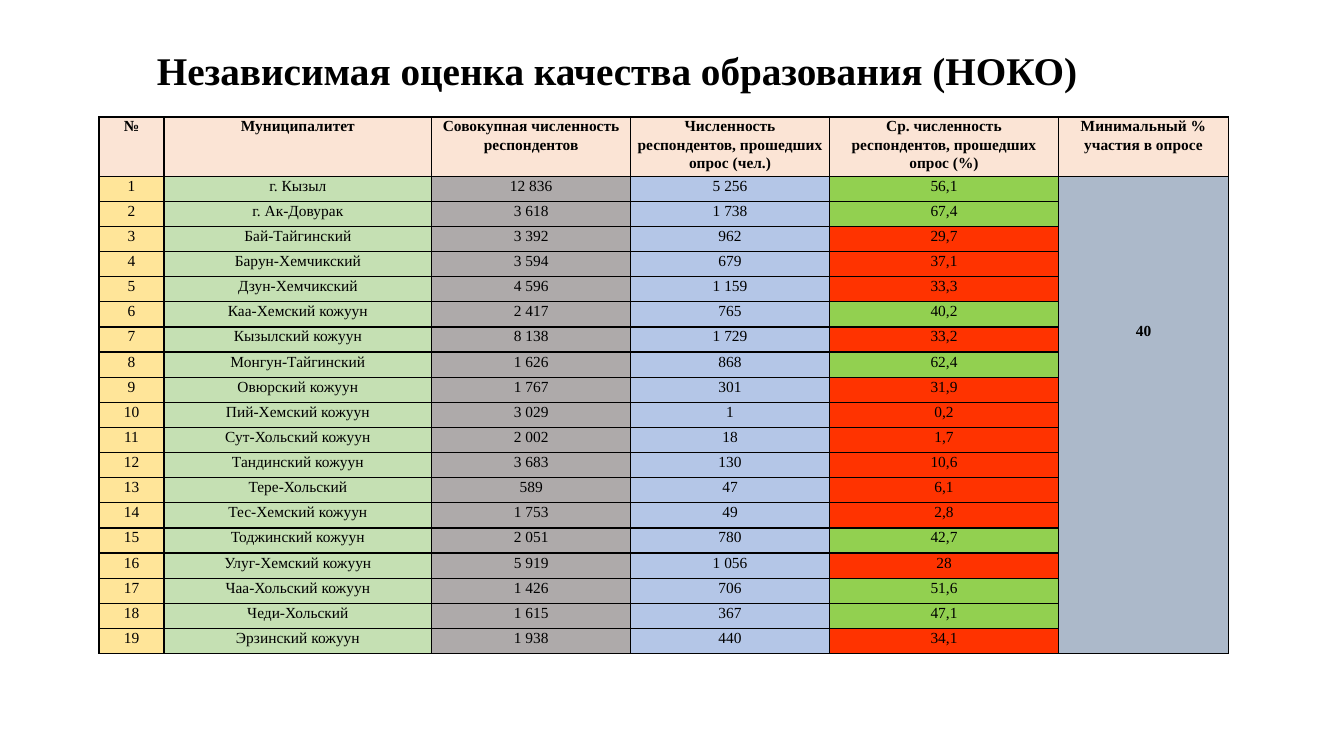
from lxml import etree
from pptx import Presentation
from pptx.dml.color import RGBColor
from pptx.enum import text
from pptx.oxml import ns
from pptx.util import Pt


def color(hex_value):
    return RGBColor.from_string(hex_value)


def write(paragraph, words, size, bold):
    run = paragraph.add_run()
    run.text = words
    run.font.name = "Times New Roman"
    run.font.size = Pt(size)
    run.font.bold = bold
    run.font.color.rgb = color("000000")


MINIMUM = 40
HEADERS = ["№", "Муниципалитет", "Совокупная численность респондентов",
           "Численность респондентов, прошедших опрос (чел.)",
           "Ср. численность респондентов, прошедших опрос (%)",
           "Минимальный % участия в опросе"]
MUNICIPALITIES = [
    ("г. Кызыл", "12 836", "5 256", "56,1"),
    ("г. Ак-Довурак", "3 618", "1 738", "67,4"),
    ("Бай-Тайгинский", "3 392", "962", "29,7"),
    ("Барун-Хемчикский", "3 594", "679", "37,1"),
    ("Дзун-Хемчикский", "4 596", "1 159", "33,3"),
    ("Каа-Хемский кожуун", "2 417", "765", "40,2"),
    ("Кызылский кожуун", "8 138", "1 729", "33,2"),
    ("Монгун-Тайгинский", "1 626", "868", "62,4"),
    ("Овюрский кожуун", "1 767", "301", "31,9"),
    ("Пий-Хемский кожуун", "3 029", "1", "0,2"),
    ("Сут-Хольский кожуун", "2 002", "18", "1,7"),
    ("Тандинский кожуун", "3 683", "130", "10,6"),
    ("Тере-Хольский", "589", "47", "6,1"),
    ("Тес-Хемский кожуун", "1 753", "49", "2,8"),
    ("Тоджинский кожуун", "2 051", "780", "42,7"),
    ("Улуг-Хемский кожуун", "5 919", "1 056", "28"),
    ("Чаа-Хольский кожуун", "1 426", "706", "51,6"),
    ("Чеди-Хольский", "1 615", "367", "47,1"),
    ("Эрзинский кожуун", "1 938", "440", "34,1"),
]
COLUMN_WIDTHS = [46.5, 191.2, 142.1, 142.1, 163.6, 121.4]
COLUMN_FILLS = ["FFE599", "C5E0B3", "AEAAAA", "B4C6E7", None, "ACB9CA"]
HEADER_HEIGHT, ROW_HEIGHT = 39.6, 17.95

presentation = Presentation()
presentation.slide_width, presentation.slide_height = Pt(960), Pt(540)
slide = presentation.slides.add_slide(presentation.slide_layouts[6])

# Title
title = slide.shapes.add_textbox(Pt(105), Pt(28.8), Pt(789), Pt(46.8)).text_frame
title.word_wrap = True
title.vertical_anchor = text.MSO_ANCHOR.MIDDLE
title.paragraphs[0].line_spacing = 0.9
write(title.paragraphs[0], "Независимая оценка качества образования (НОКО)", 28, True)

# Table grid
rows = [HEADERS]
for number, municipality in enumerate(MUNICIPALITIES, 1):
    rows.append([str(number), *municipality, str(MINIMUM) if number == 1 else ""])
survey = slide.shapes.add_table(
    len(rows), len(HEADERS), Pt(70.7), Pt(83.5), Pt(sum(COLUMN_WIDTHS)),
    Pt(HEADER_HEIGHT + ROW_HEIGHT * len(MUNICIPALITIES))).table
for column, width in zip(survey.columns, COLUMN_WIDTHS):
    column.width = Pt(width)
for index, row in enumerate(survey.rows):
    row.height = Pt(ROW_HEIGHT if index else HEADER_HEIGHT)
minimum_cell = survey.cell(1, 5)
minimum_cell.merge(survey.cell(len(MUNICIPALITIES), 5))

# Cell contents, fills and borders
for r, values in enumerate(rows):
    for c, value in enumerate(values):
        cell = survey.cell(r, c)
        cell.margin_left = cell.margin_right = Pt(5)
        cell.margin_top = cell.margin_bottom = 0
        paragraph = cell.text_frame.paragraphs[0]
        paragraph.alignment = text.PP_ALIGN.CENTER
        paragraph.line_spacing = 1.07
        if value:
            write(paragraph, value, 11, r == 0 or c == 5)

        for side in ("a:lnL", "a:lnR", "a:lnT", "a:lnB"):
            border = etree.SubElement(cell._tc.get_or_add_tcPr(), ns.qn(side), w=str(Pt(1)))
            line_fill = etree.SubElement(border, ns.qn("a:solidFill"))
            etree.SubElement(line_fill, ns.qn("a:srgbClr"), val="000000")

        if r == 0:
            fill = "FBE4D5"
        elif c == 4:
            fill = "92D050" if float(value.replace(",", ".")) >= MINIMUM else "FF3300"
        else:
            fill = COLUMN_FILLS[c]
        cell.fill.solid()
        cell.fill.fore_color.rgb = color(fill)

# The minimum stands beside the seventh municipality
minimum_cell.margin_top = Pt(104)

presentation.save("out.pptx")
